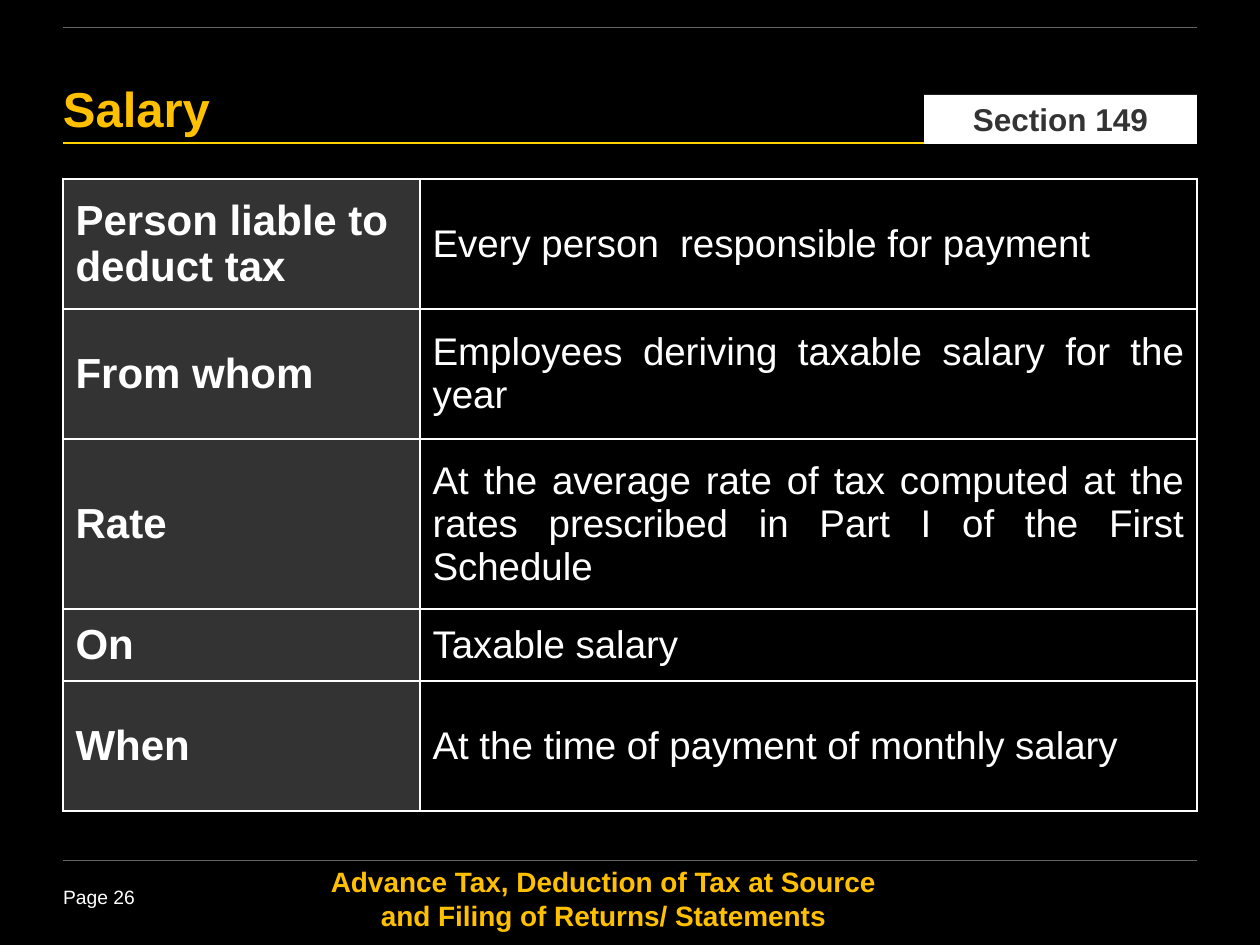
from dataclasses import dataclass

from lxml.etree import SubElement
from pptx import Presentation
from pptx.dml.color import RGBColor
from pptx.enum.shapes import MSO_CONNECTOR as Connector, MSO_SHAPE as Shape
from pptx.enum.text import MSO_ANCHOR as Anchor, PP_ALIGN as Align
from pptx.oxml.ns import qn
from pptx.util import Emu, Pt

PX_PER_INCH = 126
LEFT, RIGHT = 63, 1197


@dataclass(frozen=True)
class Theme:
    font: str = "Arial"
    background: str = "000000"
    white: str = "FFFFFF"
    dark: str = "333333"
    amber: str = "FFC000"
    yellow: str = "FFD200"
    gray: str = "646464"
    title_size: int = 28
    label_size: int = 24
    detail_size: int = 22
    section_size: int = 18
    footer_size: int = 16
    page_size: int = 11


def px(length):
    return Emu(round(length * 914400 / PX_PER_INCH))


def rgb(color):
    return RGBColor.from_string(color)


def write(frame, text, *, font, size, color, bold=False, align=Align.LEFT,
          anchor=Anchor.TOP, spacing=None, insets=(0, 0, 0, 0)):
    frame.word_wrap = True
    frame.vertical_anchor = anchor
    (frame.margin_left, frame.margin_top,
     frame.margin_right, frame.margin_bottom) = map(px, insets)
    paragraph = frame.paragraphs[0]
    paragraph.alignment = align
    if spacing:
        paragraph.line_spacing = spacing
    run = paragraph.add_run()
    run.text = text
    run.font.name = font
    run.font.size = Pt(size)
    run.font.bold = bold
    run.font.color.rgb = rgb(color)


def border(cell, color, width):
    """Draw all four edges; borders must precede the fill in the cell XML."""
    properties = cell._tc.get_or_add_tcPr()
    for position, edge in enumerate(("lnL", "lnR", "lnT", "lnB")):
        line = SubElement(properties, qn(f"a:{edge}"), w=str(Pt(width)))
        SubElement(SubElement(line, qn("a:solidFill")), qn("a:srgbClr"), val=color)
        properties.insert(position, line)


class SlideBuilder:
    def __init__(self, slide, theme):
        self.slide = slide
        self.theme = theme
        fill = slide.background.fill
        fill.solid()
        fill.fore_color.rgb = rgb(theme.background)

    def text(self, text, left, top, width, height, **style):
        box = self.slide.shapes.add_textbox(*map(px, (left, top, width, height)))
        write(box.text_frame, text, font=self.theme.font, **style)

    def rule(self, y, color, width):
        """Draw a horizontal line between the slide margins."""
        line = self.slide.shapes.add_connector(
            Connector.STRAIGHT, px(LEFT), px(y), px(RIGHT), px(y))
        line.line.color.rgb = rgb(color)
        line.line.width = Pt(width)
        SubElement(line._element.spPr, qn("a:effectLst"))

    def tag(self, text, left, top, width, height, fill, **style):
        box = self.slide.shapes.add_shape(
            Shape.RECTANGLE, *map(px, (left, top, width, height)))
        box.shadow.inherit = False
        box.fill.solid()
        box.fill.fore_color.rgb = rgb(fill)
        box.line.fill.background()
        write(box.text_frame, text, font=self.theme.font, **style)

    def table(self, rows, left, top, widths, heights, column_styles):
        table = self.slide.shapes.add_table(
            len(rows), len(widths),
            *map(px, (left, top, sum(widths), sum(heights)))).table
        table.first_row = table.horz_banding = False
        for column, width in zip(table.columns, widths):
            column.width = px(width)
        for row, height, texts in zip(table.rows, heights, rows):
            row.height = px(height)
            for cell, text, (fill, style) in zip(row.cells, texts, column_styles):
                cell.fill.solid()
                cell.fill.fore_color.rgb = rgb(fill)
                border(cell, self.theme.white, 1)
                insets = (12.6, 6.3, 12.6, 6.3)
                cell.vertical_anchor = Anchor.MIDDLE
                (cell.margin_left, cell.margin_top,
                 cell.margin_right, cell.margin_bottom) = map(px, insets)
                write(cell.text_frame, text, font=self.theme.font,
                      color=self.theme.white, anchor=Anchor.MIDDLE,
                      insets=insets, **style)


def main():
    theme = Theme()
    deck = Presentation()
    deck.slide_width, deck.slide_height = px(1260), px(945)
    salary = SlideBuilder(deck.slides.add_slide(deck.slide_layouts[6]), theme)

    salary.text("Advance Tax, Deduction of Tax at Source and Filing of Returns/ Statements",
                315, 865, 577, 66, size=theme.footer_size, color=theme.amber,
                bold=True, align=Align.CENTER)
    salary.text("Page 26", LEFT, 885, 92, 28, size=theme.page_size, color=theme.white)

    for y, color, width in ((143, theme.yellow, 1.5),
                            (860, theme.gray, 0.25),
                            (27, theme.gray, 0.5)):
        salary.rule(y, color, width)

    heading = dict(bold=True, spacing=0.85, insets=(0, 5, 0, 0))
    salary.text("Salary", LEFT, 83, 829, 62, size=theme.title_size,
                color=theme.amber, **heading)
    salary.tag("Section 149", 924, 95, 273, 49, theme.white,
               size=theme.section_size, color=theme.dark, align=Align.CENTER,
               anchor=Anchor.MIDDLE, **heading)

    provisions = [
        ("Person liable to deduct tax", "Every person  responsible for payment"),
        ("From whom", "Employees deriving taxable salary for the year"),
        ("Rate", "At the average rate of tax computed at the rates prescribed "
                 "in Part I of the First Schedule"),
        ("On", "Taxable salary"),
        ("When", "At the time of payment of monthly salary"),
    ]
    label_column = (theme.dark, dict(size=theme.label_size, bold=True))
    detail_column = (theme.background, dict(size=theme.detail_size, align=Align.JUSTIFY))
    salary.table(provisions, LEFT, 179, (357, 777), (130, 130, 170, 72, 130),
                 (label_column, detail_column))

    deck.save("out.pptx")


if __name__ == "__main__":
    main()
